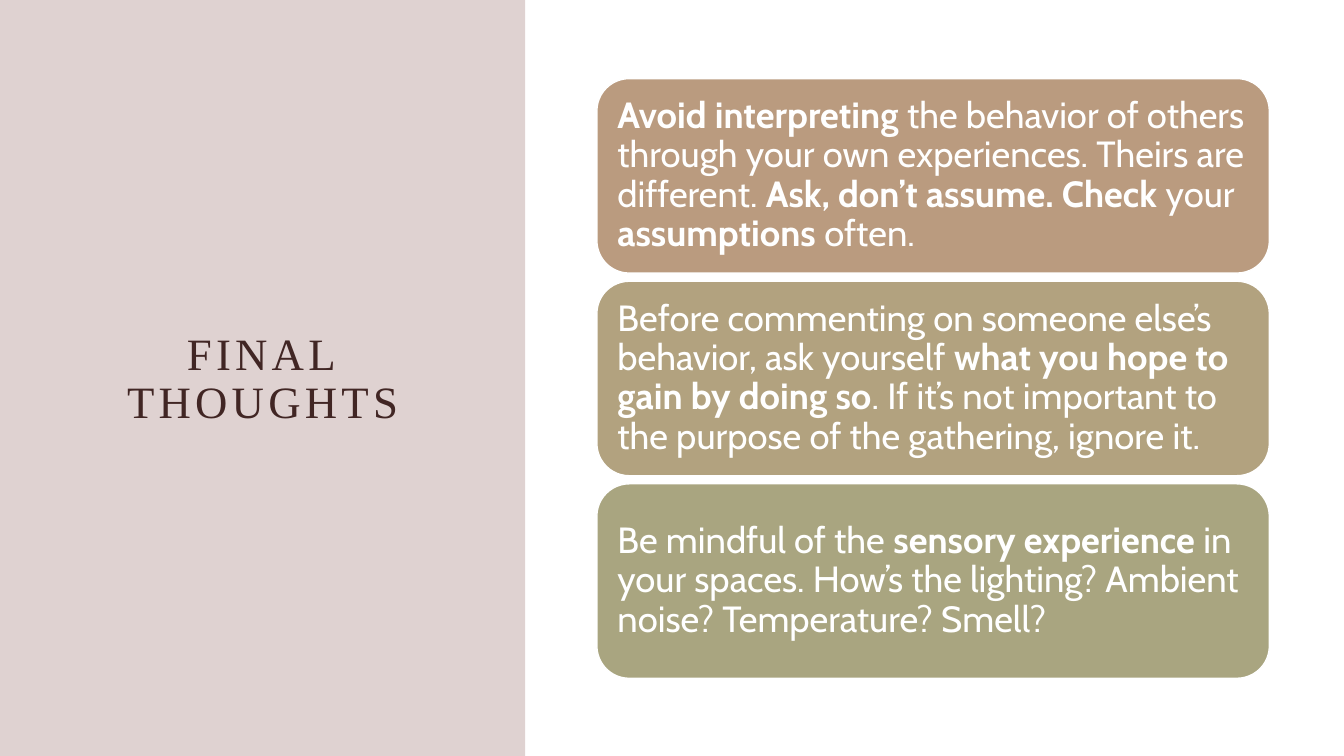
from lxml import etree
from pptx import Presentation
from pptx.dml.color import RGBColor
from pptx.enum.shapes import MSO_SHAPE
from pptx.enum.text import MSO_ANCHOR, PP_ALIGN
from pptx.oxml.ns import qn
from pptx.util import Inches, Pt

RECT, ROUND = MSO_SHAPE.RECTANGLE, MSO_SHAPE.ROUNDED_RECTANGLE
MIDDLE = MSO_ANCHOR.MIDDLE
LEFT, CENTER = PP_ALIGN.LEFT, PP_ALIGN.CENTER
WIDE, HIGH = 13.33, 7.5


def paint(color, code):
    color.rgb = RGBColor.from_string(code)


def add_run(para, text, face, size, code, bold=False):
    run = para.add_run()
    run.text = text
    font = run.font
    font.name, font.size, font.bold = face, Pt(size), bold
    paint(font.color, code)
    return run


deck = Presentation()
deck.slide_width, deck.slide_height = Inches(WIDE), Inches(HIGH)
slide = deck.slides.add_slide(deck.slide_layouts[6])
shapes = slide.shapes

panel = shapes.add_shape(RECT, 0, 0, Inches(5.21), Inches(HIGH))
panel.shadow.inherit = False
panel.fill.solid()
paint(panel.fill.fore_color, "834C48")
tint = panel.fill._xPr.find(qn("a:solidFill"))[0]
etree.SubElement(tint, qn("a:alpha")).set("val", "25000")
panel.line.fill.background()

title = shapes.add_textbox(Inches(0.75), Inches(0.77), Inches(3.71), Inches(6))
frame = title.text_frame
frame.word_wrap = True
frame.vertical_anchor = MIDDLE
para = frame.paragraphs[0]
para.alignment = CENTER
para.line_spacing = 0.9
head = add_run(para, "FINAL THOUGHTS", "Times New Roman", 32, "412624")
head.font._element.set("spc", "300")

cards = [
    ("BA9B7F", [
        ("Avoid interpreting ", True),
        ("the behavior of others through your own experiences. "
         "Theirs are different. ", False),
        ("Ask, don’t assume. Check", True),
        (" your ", False),
        ("assumptions", True),
        (" often.", False),
    ]),
    ("B2A27F", [
        ("Before commenting on someone else’s behavior, ask yourself ", False),
        ("what you hope to gain by doing so", True),
        (". If it’s not important to the purpose of the gathering, "
         "ignore it.", False),
    ]),
    ("A9A580", [
        ("Be mindful of the ", False),
        ("sensory experience ", True),
        ("in your spaces. How’s the lighting? Ambient noise? "
         "Temperature? Smell?", False),
    ]),
]
top, tall, gap = 0.78, 1.93, 0.08
for row, (fill, parts) in enumerate(cards):
    y = top + row * (tall + gap)
    card = shapes.add_shape(ROUND, Inches(5.92), Inches(y), Inches(6.67), Inches(tall))
    card.shadow.inherit = False
    card.fill.solid()
    paint(card.fill.fore_color, fill)
    paint(card.line.color, "FFFFFF")
    card.line.width = Pt(1)
    frame = card.text_frame
    frame.word_wrap = True
    frame.vertical_anchor = MIDDLE
    frame.margin_left = frame.margin_right = Inches(0.11)
    frame.margin_top = frame.margin_bottom = Inches(0.11)
    para = frame.paragraphs[0]
    para.alignment = LEFT
    para.line_spacing = 0.9
    for text, bold in parts:
        add_run(para, text, "Cabin", 26, "FFFFFF", bold)

deck.save("out.pptx")
